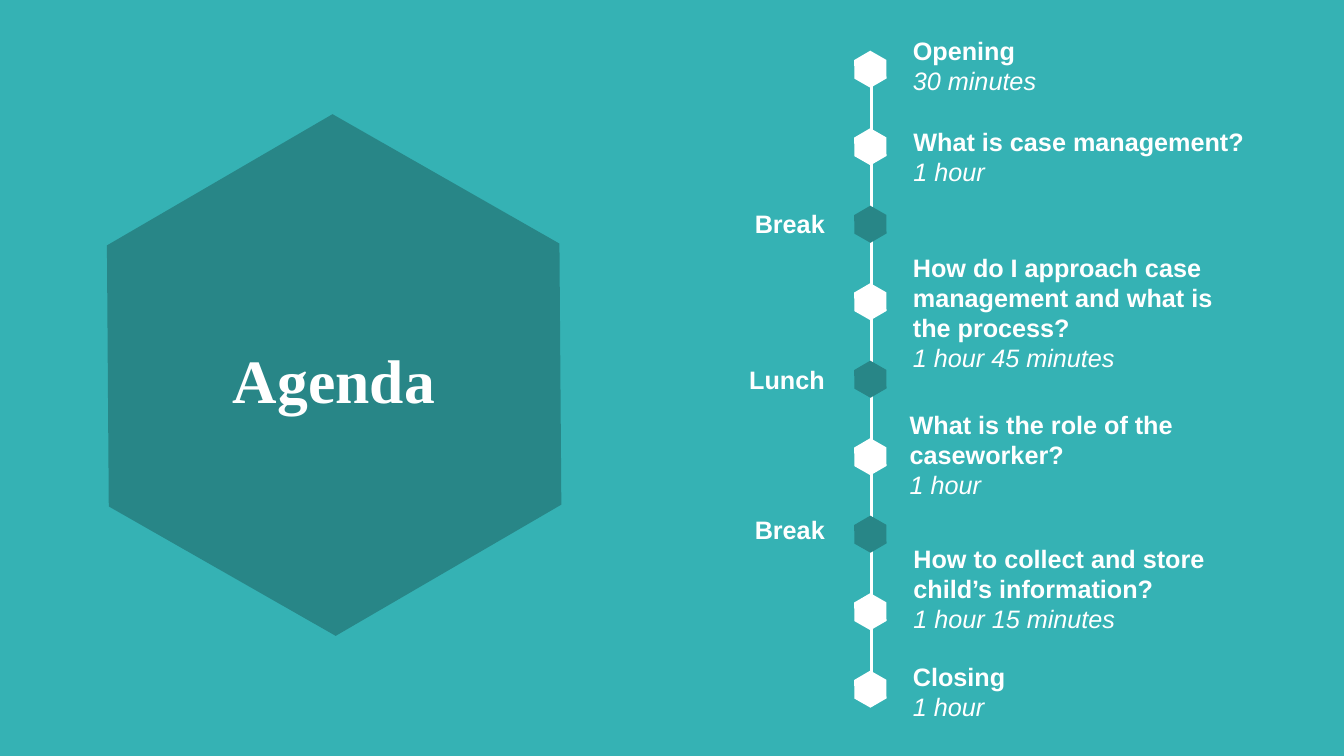
from lxml import etree
from pptx import Presentation
from pptx.dml.color import RGBColor
from pptx.enum.shapes import MSO_CONNECTOR, MSO_SHAPE
from pptx.enum.text import MSO_ANCHOR, MSO_AUTO_SIZE, PP_ALIGN
from pptx.oxml.ns import qn
from pptx.util import Pt

HEXAGON = MSO_SHAPE.HEXAGON
STRAIGHT = MSO_CONNECTOR.STRAIGHT
MIDDLE = MSO_ANCHOR.MIDDLE
GROW = MSO_AUTO_SIZE.SHAPE_TO_FIT_TEXT
LEFT, CENTER, RIGHT = PP_ALIGN.LEFT, PP_ALIGN.CENTER, PP_ALIGN.RIGHT

TEAL = RGBColor(0x35, 0xB2, 0xB4)
DARK_TEAL = RGBColor(0x28, 0x86, 0x87)
WHITE = RGBColor(0xFF, 0xFF, 0xFF)

MARKER_LEFT, MARKER_TOP, MARKER_STEP = 608.4, 38, 55.35
PAUSE_LEFT, PAUSE_WIDTH = 489.6, 106.6

SESSIONS = [
    (0, 645, 21.6, 121, 51, "Opening", "30 minutes"),
    (1, 645.4, 86.4, 258.5, 51, "What is case management?", "1 hour"),
    (3, 645, 176.4, 258.5, 94.5,
     "How do I approach case management and what is the process?", "1 hour 45 minutes"),
    (5, 642.7, 288.7, 258.5, 72.7, "What is the role of the caseworker?", "1 hour"),
    (7, 645.4, 384.5, 278.6, 72.7,
     "How to collect and store child’s information?", "1 hour 15 minutes"),
    (8, 645, 468.7, 258.5, 51, "Closing", "1 hour"),
]
PAUSES = [(2, 145.4, "Break"), (4, 257, "Lunch"), (6, 363.6, "Break")]


class AgendaSlide:
    body_font = "Arial"
    title_font = "Times New Roman"
    body_size = 18
    title_size = 44

    def __init__(self, deck):
        self.page = deck.slides.add_slide(deck.slide_layouts[6])
        self.page.background.fill.solid()
        self.page.background.fill.fore_color.rgb = TEAL

    def hexagon(self, left, top, width, height, color):
        shape = self.page.shapes.add_shape(HEXAGON, Pt(left), Pt(top), Pt(width), Pt(height))
        shape.adjustments[0] = 0.29
        shape.rotation = 29.7
        shape.shadow.inherit = False
        shape.fill.solid()
        shape.fill.fore_color.rgb = color
        shape.line.fill.background()

    def marker(self, position, color):
        self.hexagon(MARKER_LEFT, MARKER_TOP + position * MARKER_STEP, 26.6, 23, color)

    def line(self, x, top, bottom):
        connector = self.page.shapes.add_connector(STRAIGHT, Pt(x), Pt(top), Pt(x), Pt(bottom))
        connector.line.color.rgb = WHITE
        connector.line.width = Pt(2.25)
        etree.SubElement(connector._element.spPr, qn("a:effectLst"))

    def text_box(self, left, top, width, height):
        frame = self.page.shapes.add_textbox(Pt(left), Pt(top), Pt(width), Pt(height)).text_frame
        frame.word_wrap = True
        return frame

    def style_text(self, para, text, font, size, align, bold=True):
        para.text = text
        para.alignment = align
        para.font.name = font
        para.font.size = Pt(size)
        para.font.color.rgb = WHITE
        para.font.bold = bold
        para.font.italic = not bold

    def title(self, text, left, top, width, height):
        frame = self.text_box(left, top, width, height)
        frame.vertical_anchor = MIDDLE
        self.style_text(frame.paragraphs[0], text, self.title_font, self.title_size, CENTER)
        frame.paragraphs[0].line_spacing = 0.9

    def session(self, left, top, width, height, topic, duration):
        frame = self.text_box(left, top, width, height)
        frame.auto_size = GROW
        self.style_text(frame.paragraphs[0], topic, self.body_font, self.body_size, LEFT)
        self.style_text(frame.add_paragraph(), duration, self.body_font, self.body_size, LEFT, False)

    def pause(self, top, label):
        frame = self.text_box(PAUSE_LEFT, top, PAUSE_WIDTH, 29)
        frame.auto_size = GROW
        self.style_text(frame.paragraphs[0], label, self.body_font, self.body_size, RIGHT)


def main():
    deck = Presentation()
    deck.slide_width, deck.slide_height = Pt(960), Pt(540)
    agenda = AgendaSlide(deck)
    agenda.hexagon(51.8, 106.6, 373.7, 322.6, DARK_TEAL)
    agenda.title("Agenda", 80.6, 252, 316, 44)
    agenda.line(622.8, 44.6, 492.5)
    for position, *place, topic, duration in SESSIONS:
        agenda.marker(position, WHITE)
        agenda.session(*place, topic, duration)
    for position, top, label in PAUSES:
        agenda.marker(position, DARK_TEAL)
        agenda.pause(top, label)
    deck.save("out.pptx")


if __name__ == "__main__":
    main()
